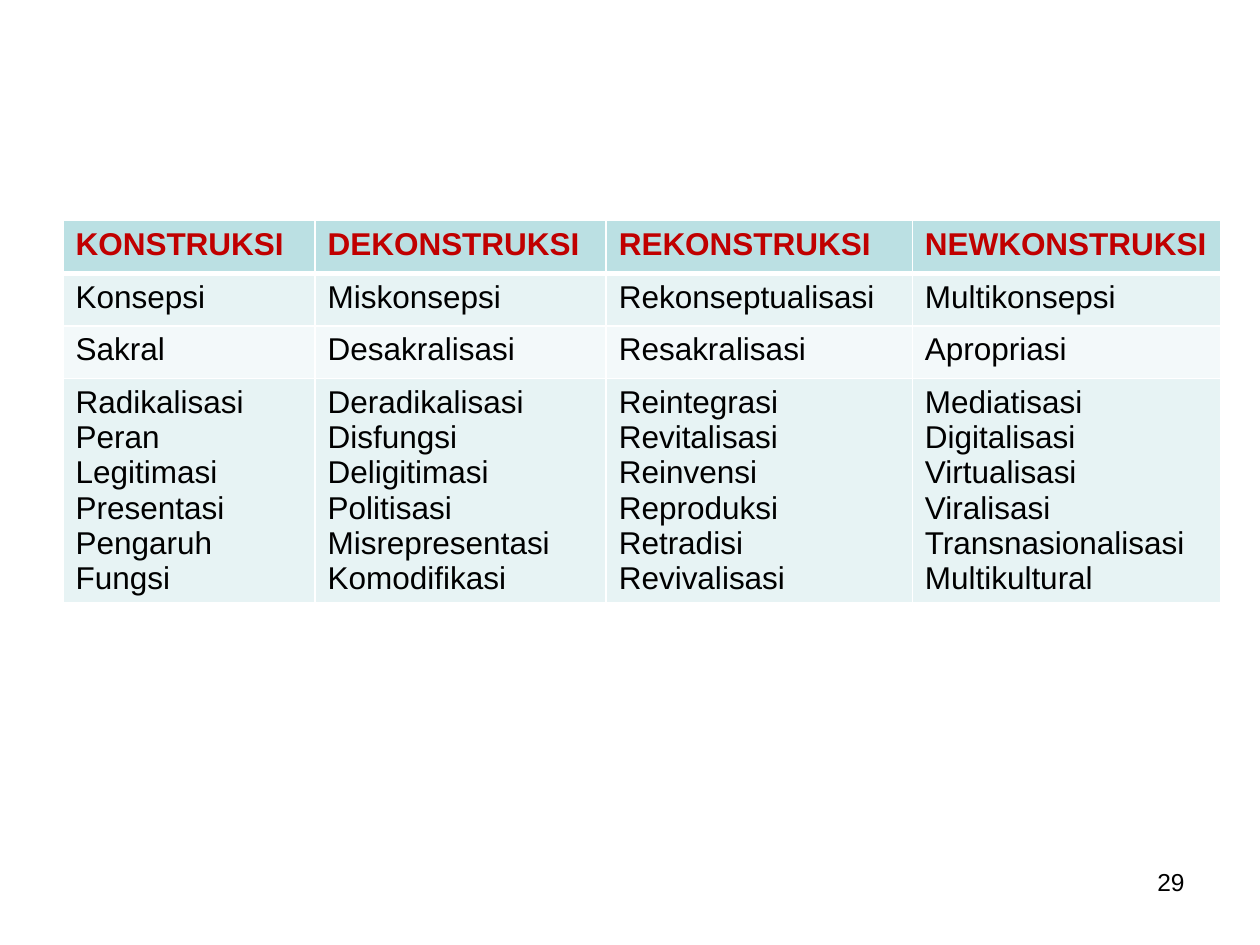
"""Build a slide with a table of four stages of construction."""
from dataclasses import dataclass

from lxml import etree
from pptx import Presentation
from pptx import util as u
from pptx.dml import color
from pptx.enum import text
from pptx.oxml import ns


@dataclass(frozen=True)
class Theme:
    font: str = "Arial"
    heading: str = "C00000"
    ink: str = "000000"
    border: str = "FFFFFF"
    row_fills: tuple = ("BBE0E3", "E7F3F4", "F3F9FA", "E7F3F4")
    table_size: int = 18
    number_size: int = 14


theme = Theme()


def style(paragraph, size, ink, bold=False):
    font = paragraph.font
    font.name, font.size, font.bold = theme.font, u.Pt(size), bold
    font.color.rgb = color.RGBColor.from_string(ink)


def add_border(cell, side, points):
    line = etree.SubElement(cell._tc.get_or_add_tcPr(), ns.qn(f"a:ln{side}"), w=str(u.Pt(points)))
    fill = etree.SubElement(line, ns.qn("a:solidFill"))
    etree.SubElement(fill, ns.qn("a:srgbClr"), val=theme.border)


stages = [
    ["KONSTRUKSI", "DEKONSTRUKSI", "REKONSTRUKSI", "NEWKONSTRUKSI"],
    ["Konsepsi", "Miskonsepsi", "Rekonseptualisasi", "Multikonsepsi"],
    ["Sakral", "Desakralisasi", "Resakralisasi", "Apropriasi"],
    [
        "Radikalisasi\nPeran\nLegitimasi\nPresentasi\nPengaruh\nFungsi",
        "Deradikalisasi\nDisfungsi\nDeligitimasi\nPolitisasi\nMisrepresentasi\nKomodifikasi",
        "Reintegrasi\nRevitalisasi\nReinvensi\nReproduksi\nRetradisi\nRevivalisasi",
        "Mediatisasi\nDigitalisasi\nVirtualisasi\nViralisasi\nTransnasionalisasi\nMultikultural",
    ],
]
column_widths = [5.08, 5.87, 6.17, 6.22]
row_heights = [1.06, 1.06, 1.06, 4.5]

deck = Presentation()
deck.slide_width, deck.slide_height = u.Cm(25.4), u.Cm(19.05)
slide = deck.slides.add_slide(deck.slide_layouts[6])

stage_table = slide.shapes.add_table(
    len(row_heights), len(column_widths), u.Cm(1.27), u.Cm(4.45),
    u.Cm(sum(column_widths)), u.Cm(sum(row_heights)),
).table
for column, width in zip(stage_table.columns, column_widths):
    column.width = u.Cm(width)
for row, height in zip(stage_table.rows, row_heights):
    row.height = u.Cm(height)

for r, (terms, row_fill) in enumerate(zip(stages, theme.row_fills)):
    is_heading = r == 0
    for c, term in enumerate(terms):
        cell = stage_table.cell(r, c)
        cell.text = term
        for side in "LRTB":
            under_heading = (r, side) in ((0, "B"), (1, "T"))
            add_border(cell, side, 3 if under_heading else 1)
        cell.fill.solid()
        cell.fill.fore_color.rgb = color.RGBColor.from_string(row_fill)
        for paragraph in cell.text_frame.paragraphs:
            style(paragraph, theme.table_size, theme.heading if is_heading else theme.ink, is_heading)

page_number = slide.shapes.add_textbox(u.Cm(18.2), u.Cm(17.35), u.Cm(5.93), u.Cm(1.32)).text_frame
page_number.word_wrap = True
page_number.text = "29"
page_number.paragraphs[0].alignment = text.PP_ALIGN.RIGHT
style(page_number.paragraphs[0], theme.number_size, theme.ink)

deck.save("out.pptx")
